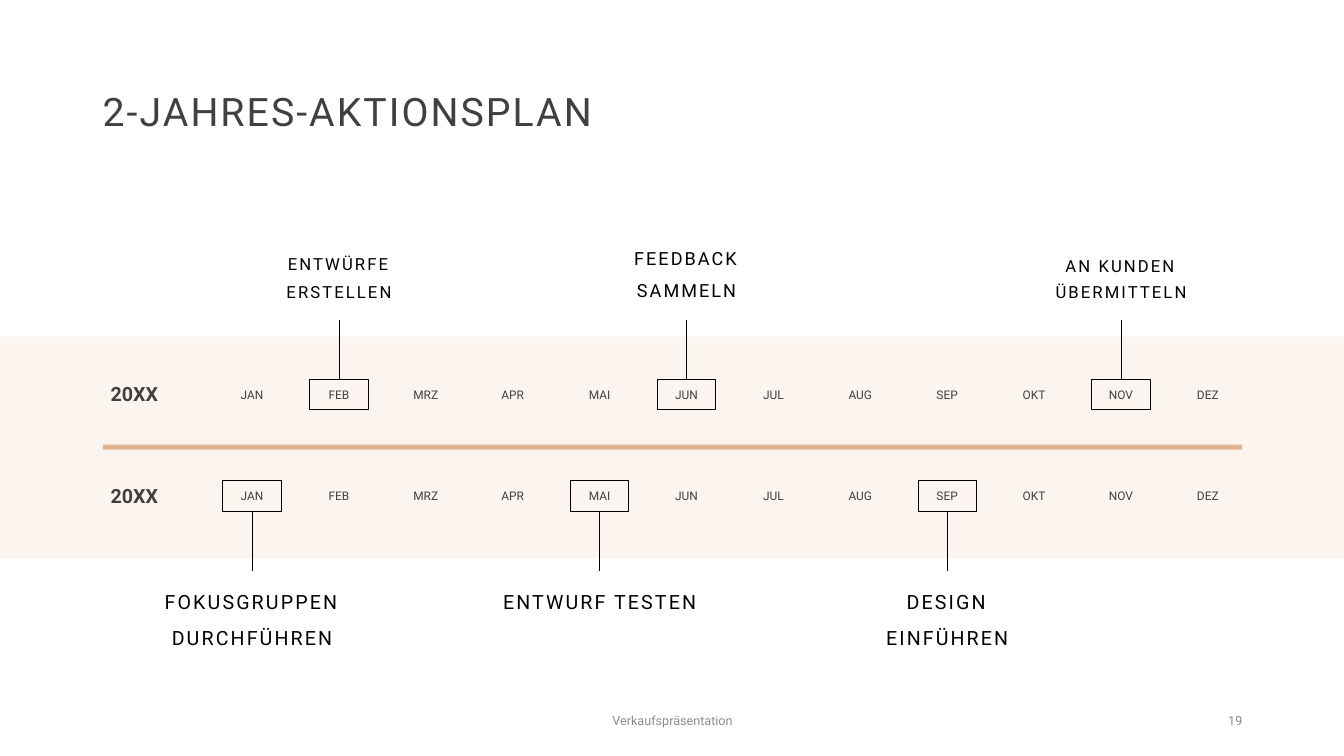
from lxml import etree
from pptx import Presentation
from pptx import util as u
from pptx.dml.color import RGBColor
from pptx.enum import shapes, text
from pptx.oxml.ns import qn

INK = RGBColor(0x40, 0x40, 0x40)
BLACK = RGBColor(0, 0, 0)
GREY = RGBColor(0x8C, 0x8C, 0x8C)
CREAM = RGBColor(0xFB, 0xF4, 0xEF)
TAN = RGBColor(0xE2, 0xB1, 0x8D)
FONT = "Roboto"

# Grid in inches: twelve month columns, two year rows (centres)
WIDE, HIGH = 13.33, 7.5
FIRST, LAST = 2.5, 11.98
COL = (LAST - FIRST) / 11
ROWS = (3.91, 4.92)
BOX_W, BOX_H, STEM = 0.58, 0.3, 0.59
MONTHS = "JAN FEB MRZ APR MAI JUN JUL AUG SEP OKT NOV DEZ".split()

LEFT, MID, RIGHT = text.PP_ALIGN.LEFT, text.PP_ALIGN.CENTER, text.PP_ALIGN.RIGHT
TOP, CENTRE, BASE = (text.MSO_ANCHOR.TOP, text.MSO_ANCHOR.MIDDLE,
                     text.MSO_ANCHOR.BOTTOM)

# Month, label, size, line spacing, width, height
UPPER = [
    ("FEB", "ENTWÜRFE ERSTELLEN", 11.9, 1.4, 2.25, 0.61),
    ("JUN", "FEEDBACK SAMMELN", 12.9, 1.5, 2.25, 0.61),
    ("NOV", "AN KUNDEN ÜBERMITTELN", 11.9, 1.3, 2.25, 0.61),
]
LOWER = [
    ("JAN", "FOKUSGRUPPEN DURCHFÜHREN", 14, 1.5, 1.94, 0.91),
    ("MAI", "ENTWURF TESTEN", 14, 1.5, 2.25, 0.61),
    ("SEP", "DESIGN EINFÜHREN", 14, 1.5, 2.25, 0.61),
]


def month_x(name):
    return FIRST + MONTHS.index(name) * COL


def add_text(slide, words, x, y, w, h, size=9, color=INK, bold=False,
             align=LEFT, anchor=CENTRE, lead=1.0, before=0, track=0):
    box = slide.shapes.add_textbox(*map(u.Inches, (x, y, w, h)))
    frame = box.text_frame
    frame.word_wrap = True
    frame.vertical_anchor = anchor
    para = frame.paragraphs[0]
    para.alignment = align
    para.line_spacing = lead
    para.space_before = u.Pt(before)
    run = para.add_run()
    run.text = words
    font = run.font
    font.name, font.size, font.bold = FONT, u.Pt(size), bold
    font.color.rgb = color
    if track:
        run._r.get_or_add_rPr().set("spc", str(round(track * 100)))


def add_rect(slide, x, y, w, h, fill=None, line=None):
    rect = slide.shapes.add_shape(shapes.MSO_SHAPE.RECTANGLE,
                                  *map(u.Inches, (x, y, w, h)))
    rect.shadow.inherit = False
    if fill is None:
        rect.fill.background()
    else:
        rect.fill.solid()
        rect.fill.fore_color.rgb = fill
    if line is None:
        rect.line.fill.background()
    else:
        rect.line.color.rgb = line
        rect.line.width = u.Pt(0.5)
    return rect


def add_stem(slide, rect, x, start, end, side):
    stem = slide.shapes.add_connector(shapes.MSO_CONNECTOR.STRAIGHT,
                                      *map(u.Inches, (x, start, x, end)))
    stem.begin_connect(rect, side)
    stem.line.color.rgb = BLACK
    stem.line.width = u.Pt(0.5)
    etree.SubElement(stem._element.spPr, qn("a:effectLst"))


def add_year(slide, row):
    add_text(slide, "20XX", 1, row - 0.24, 0.8, 0.5, size=14, bold=True,
             lead=0.9, before=10)
    for name in MONTHS:
        add_text(slide, name, month_x(name) - 0.35, row - 0.08, 0.7, 0.22,
                 size=8.5, align=MID, anchor=TOP, lead=0.7, before=10)


def add_step(slide, row, above, name, words, size, lead, w, h):
    x = month_x(name)
    rect = add_rect(slide, x - BOX_W / 2, row - BOX_H / 2, BOX_W, BOX_H,
                    line=BLACK)
    way = -1 if above else 1
    edge = row + way * BOX_H / 2
    tip = edge + way * STEM
    add_stem(slide, rect, x, edge, tip, 0 if above else 2)
    y = tip - 0.13 - h if above else tip + 0.03
    add_text(slide, words, x - w / 2, y, w, h, size=size, color=BLACK,
             align=MID, anchor=BASE if above else TOP, lead=lead,
             before=10, track=1.5)


def main():
    deck = Presentation()
    deck.slide_width, deck.slide_height = u.Inches(WIDE), u.Inches(HIGH)
    slide = deck.slides.add_slide(deck.slide_layouts[6])

    # Band, divider and title
    add_rect(slide, 0, 3.34, WIDE, 2.2, fill=CREAM)
    add_rect(slide, 1.02, 4.41, 11.3, 0.05, fill=TAN)
    add_text(slide, "2-JAHRES-AKTIONSPLAN", 0.92, 0.4, 11.5, 1.45, size=28,
             lead=0.9, track=1.5)

    # Both years with their steps
    for row, steps, above in zip(ROWS, (UPPER, LOWER), (True, False)):
        add_year(slide, row)
        for step in steps:
            add_step(slide, row, above, *step)

    # Footer
    add_text(slide, "Verkaufspräsentation", 4.42, 6.95, 4.5, 0.4,
             color=GREY, align=MID)
    add_text(slide, "19", 9.42, 6.95, 3, 0.4, color=GREY, align=RIGHT)

    deck.save("out.pptx")


if __name__ == "__main__":
    main()
